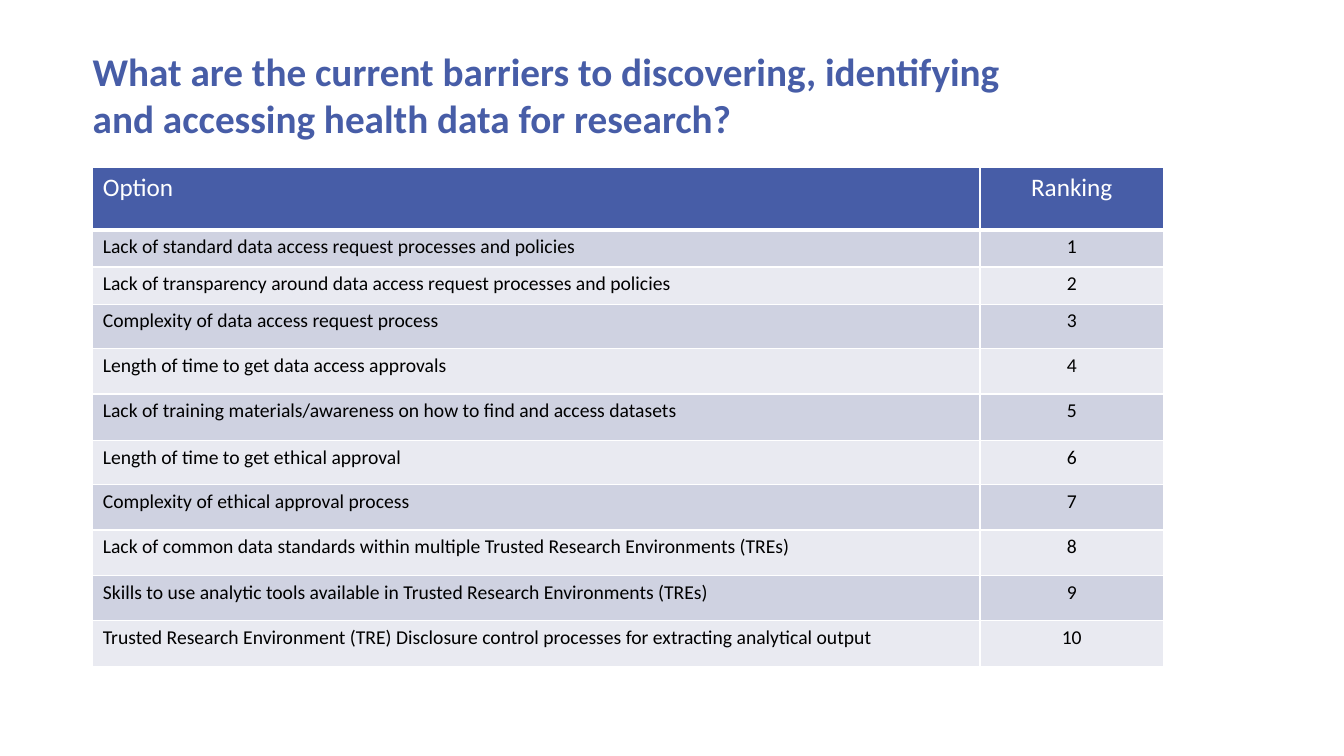
from dataclasses import dataclass

from lxml.etree import SubElement as Sub
from pptx import Presentation
from pptx.dml.color import RGBColor as Rgb
from pptx.enum.text import MSO_ANCHOR as Anchor, PP_ALIGN as Align
from pptx.oxml.ns import qn
from pptx.util import Inches, Pt


@dataclass(frozen=True)
class Theme:
    """Colours, type sizes and line widths of the slide."""
    font: str = "Calibri"
    blue: str = "475DA7"
    dark: str = "CFD2E1"
    light: str = "E9EAF1"
    white: str = "FFFFFF"
    black: str = "000000"
    title: int = 28
    head: int = 18
    body: int = 14
    thin: int = 1
    thick: int = 3


THEME = Theme()
TITLE = ("What are the current barriers to discovering, identifying "
         "and accessing health data for research?")
HEADS = ("Option", "Ranking")
OPTIONS = (
    ("Lack of standard data access request processes and policies", 0.37),
    ("Lack of transparency around data access request processes and policies", 0.37),
    ("Complexity of data access request process", 0.44),
    ("Length of time to get data access approvals", 0.45),
    ("Lack of training materials/awareness on how to find and access datasets", 0.46),
    ("Length of time to get ethical approval", 0.44),
    ("Complexity of ethical approval process", 0.45),
    ("Lack of common data standards within multiple Trusted Research Environments (TREs)", 0.45),
    ("Skills to use analytic tools available in Trusted Research Environments (TREs)", 0.45),
    ("Trusted Research Environment (TRE) Disclosure control processes for extracting "
     "analytical output", 0.45),
)
HEAD_HIGH = 0.62
RANK_WIDE = 1.82


def apply(item, form):
    """Set each attribute named in a dict of format values."""
    for name, value in form.items():
        setattr(item, name, value)


def write(frame, text, size, color, bold=False, align=Align.LEFT):
    """Put one styled paragraph in a text frame."""
    para = frame.paragraphs[0]
    para.alignment = align
    run = para.add_run()
    run.text = text
    apply(run.font, {"name": THEME.font, "size": Pt(size), "bold": bold})
    run.font.color.rgb = Rgb.from_string(color)


def rule(cell, row):
    """Draw white borders round a cell, thick below the header."""
    props = cell._tc.get_or_add_tcPr()
    for side in "LRTB":
        heavy = (row, side) in ((0, "B"), (1, "T"))
        width = THEME.thick if heavy else THEME.thin
        line = Sub(props, qn(f"a:ln{side}"), w=str(Pt(width)))
        Sub(Sub(line, qn("a:solidFill")), qn("a:srgbClr"), val=THEME.white)


def add_title(slide, box):
    """Add the question, resting on the bottom of its box."""
    frame = slide.shapes.add_textbox(*map(Inches, box)).text_frame
    apply(frame, {"word_wrap": True, "vertical_anchor": Anchor.BOTTOM,
                  "margin_left": 0, "margin_right": 0,
                  "margin_top": 0, "margin_bottom": 0})
    write(frame, TITLE, THEME.title, THEME.blue, True)


def add_ranks(slide, box):
    """Add the table of ranked barriers."""
    rows = [HEADS] + [(text, str(rank)) for rank, (text, _) in enumerate(OPTIONS, 1)]
    highs = [HEAD_HIGH] + [high for _, high in OPTIONS]
    table = slide.shapes.add_table(len(rows), len(HEADS), *map(Inches, box)).table
    for col, wide in zip(table.columns, (box[2] - RANK_WIDE, RANK_WIDE)):
        col.width = Inches(wide)
    for row, (texts, high) in enumerate(zip(rows, highs)):
        table.rows[row].height = Inches(high)
        if row == 0:
            fill, size, color = THEME.blue, THEME.head, THEME.white
        else:
            fill = THEME.dark if row % 2 else THEME.light
            size, color = THEME.body, THEME.black
        for col, text in enumerate(texts):
            cell = table.cell(row, col)
            rule(cell, row)
            cell.fill.solid()
            cell.fill.fore_color.rgb = Rgb.from_string(fill)
            align = Align.CENTER if col else Align.LEFT
            write(cell.text_frame, text, size, color, align=align)


def main():
    """Build the slide and save it."""
    deck = Presentation()
    apply(deck, {"slide_width": Inches(13.33), "slide_height": Inches(7.5)})
    slide = deck.slides.add_slide(deck.slide_layouts[6])
    add_title(slide, (0.92, 0.73, 9.24, 0.67))
    add_ranks(slide, (0.92, 1.66, 10.62, 4.96))
    deck.save("out.pptx")


if __name__ == "__main__":
    main()
